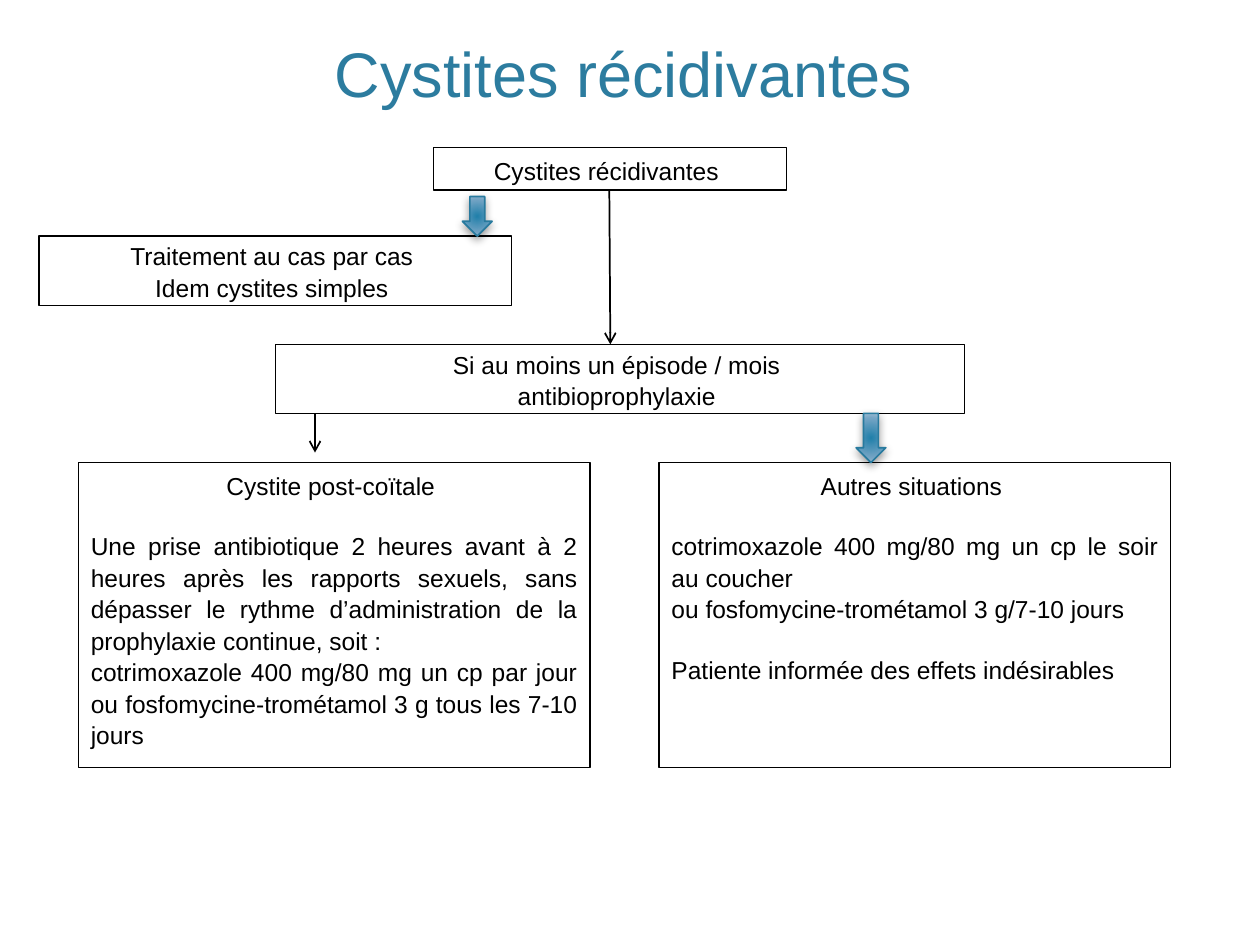
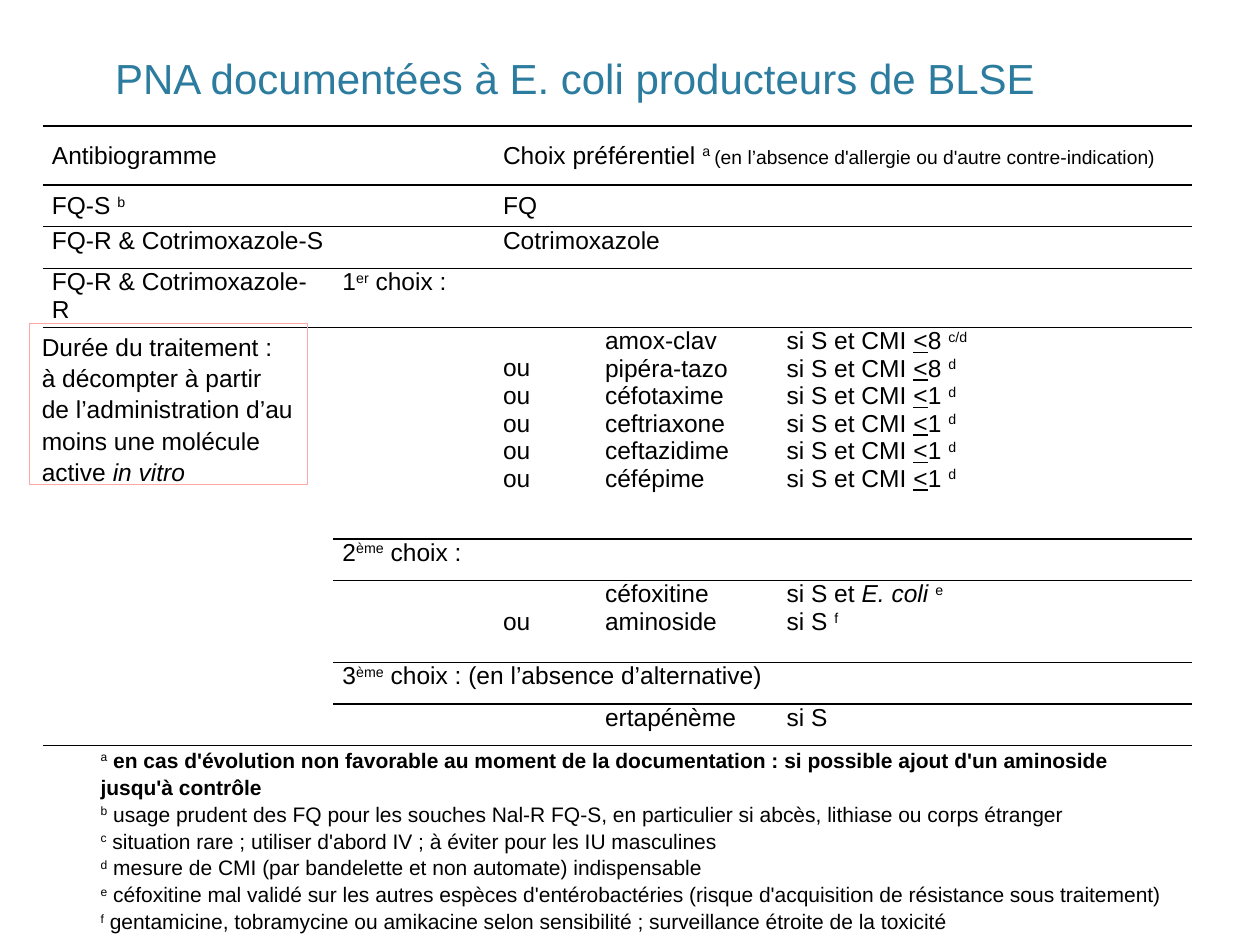
from lxml import etree
from pptx import Presentation
from pptx.dml.color import RGBColor as Rgb
from pptx.enum.shapes import MSO_CONNECTOR as Con, MSO_SHAPE as Shp
from pptx.enum.text import MSO_ANCHOR as Anc, PP_ALIGN as Al
from pptx.oxml import parse_xml
from pptx.oxml.ns import qn
from pptx.util import Pt

HEX = {"ink": "000000", "title": "2C7C9F", "edge": "287A9E", "note": "FFA7A7",
       "deep": "2180AA", "mid": "75A5C5", "pale": "B8CCDC"}
FONT = "Arial"
LEAD = 1.07     # line spacing in boxes
GAP = 16.8      # one empty line in a box
LINE = 15.7     # one line in a table cell
NS = 'xmlns:a="http://schemas.openxmlformats.org/drawingml/2006/main"'
PLAIN = "{2D5ABB26-0587-4C30-8999-92F81FD0307C}"
ALIGN = {"c": Al.CENTER, "j": Al.JUSTIFY, "l": Al.LEFT}

# A paragraph is a list of parts: plain text, or (text, mark) with the marks
# ^ superscript, _ underlined, / italic, * bold, s small.

# Flow chart: place, anchor, then (align, space before, parts)
FLOW = [
    ((247.7, 84.2, 201.6, 24.5), Anc.TOP, [("c", 0, ["Cystites récidivantes "])]),
    ((22.3, 134.9, 270, 39.6), Anc.MIDDLE, [
        ("c", 0, ["Traitement au cas par cas "]),
        ("c", 0, ["Idem cystites simples "])]),
    ((157.5, 196.8, 393.8, 39.6), Anc.MIDDLE, [
        ("c", 0, ["Si au moins un épisode / mois "]),
        ("c", 0, ["antibioprophylaxie "])]),
    ((44.8, 264.2, 292.4, 174.3), Anc.TOP, [
        ("c", 0, ["Cystite post-coïtale "]),
        ("j", GAP, ["Une prise antibiotique 2 heures avant à 2 heures après les rapports "
                    "sexuels, sans dépasser le rythme d’administration de la prophylaxie "
                    "continue, soit : "]),
        ("j", 0, ["cotrimoxazole 400 mg/80 mg un cp par jour ou "
                  "fosfomycine-trométamol 3 g tous les 7-10 jours "])]),
    ((376.6, 264.2, 292.4, 174.3), Anc.TOP, [
        ("c", 0, ["Autres situations "]),
        ("j", GAP, ["cotrimoxazole 400 mg/80 mg un cp le soir au coucher"]),
        ("j", 0, ["ou fosfomycine-trométamol 3 g/7-10 jours "]),
        ("j", GAP, ["Patiente informée des effets indésirables"])]),
]
LINKS = [(348.2, 108.8, 348.8, 196.8), (180, 236.4, 180, 258.6)]
BLOCKS = [(264.3, 112.3, 16.9, 22.6), (489.3, 236.2, 16.9, 28.1)]

# Table of choices
COLS = [166, 91.8, 58.3, 103.7, 236.9]
ROWS = [33.8, 23.8, 23.8, 33.1, 121, 23.8, 23.8, 23, 23.8, 23.8]
DRUGS = [("amox-clav", "8 ", "c/d"), ("pipéra-tazo", "8 ", "d"), ("céfotaxime", "1 ", "d"),
         ("ceftriaxone", "1 ", "d"), ("ceftazidime", "1 ", "d"), ("céfépime", "1 ", "d")]
CELLS = {
    (0, 0): [["Antibiogramme"]],
    (0, 2): [["Choix préférentiel ", ("a ", "^"),
              ("(en l’absence d'allergie ou d'autre contre-indication)", "s")]],
    (1, 0): [["FQ-S ", ("b", "^")]],
    (1, 2): [["FQ"]],
    (2, 0): [["FQ-R & Cotrimoxazole-S"]],
    (2, 2): [["Cotrimoxazole"]],
    (3, 0): [["FQ-R & Cotrimoxazole-R"]],
    (3, 1): [["1", ("er", "^"), " choix :"]],
    (4, 2): [["ou"]] * (len(DRUGS) - 1),
    (4, 3): [[name] for name, _, _ in DRUGS],
    (4, 4): [["si S et CMI ", ("<", "_"), cap, (ref, "^")] for _, cap, ref in DRUGS],
    (5, 1): [["2", ("ème", "^"), " choix :"]],
    (6, 2): [["ou"]],
    (6, 3): [["céfoxitine"], ["aminoside"]],
    (6, 4): [["si S et ", ("E. coli ", "/"), ("e", "^")], ["si S ", ("f", "^")]],
    (8, 1): [["3", ("ème", "^"), " choix : (en l’absence d’alternative)"]],
    (9, 3): [["ertapénème"]],
    (9, 4): [["si S"]],
}
SPANS = [(r, 2, r, 4) for r in (0, 1, 2, 3, 5)] + [(6, c, 7, c) for c in (2, 3, 4)]
SPANS.append((8, 1, 8, 4))
RULES = {0: 0, 1: 0, 2: 0, 3: 0, 5: 1, 8: 1}    # row: first column of its top rule
MIDDLE = (0, 1)                                 # rows centred in height
LOWER = [(4, 2), (6, 2)]                        # cells that start one line down

NOTES = [
    ("a", [(" en cas d'évolution non favorable au moment de la documentation : "
            "si possible ajout d'un aminoside jusqu'à contrôle", "*")]),
    ("b", [" usage prudent des FQ pour les souches Nal-R FQ-S, en particulier si abcès, "
           "lithiase ou corps étranger"]),
    ("c", [" situation rare ; utiliser d'abord IV ; à éviter pour les IU masculines"]),
    ("d", [" mesure de CMI (par bandelette et non automate) indispensable"]),
    ("e", [" céfoxitine mal validé sur les autres espèces d'entérobactéries "
           "(risque d'acquisition de résistance sous traitement)"]),
    ("f", [" gentamicine, tobramycine ou amikacine selon sensibilité ; "
           "surveillance étroite de la toxicité"]),
]
TERM = [
    ("l", 0, ["Durée du traitement :"]),
    ("l", 0, ["à décompter à partir de l’administration d’au moins une molécule active ",
              ("in vitro", "/")]),
]


def pts(*nums):
    return [Pt(n) for n in nums]


def write(para, parts, size=14, tint="ink"):
    for part in parts:
        text, mark = (part, "") if isinstance(part, str) else part
        run = para.add_run()
        run.text = text
        font = run.font
        font.name = FONT
        font.size = Pt(11 if mark == "s" else size)
        font.color.rgb = Rgb.from_string(HEX[tint])
        if mark == "^":
            run._r.get_or_add_rPr().set("baseline", "30000")
        elif mark == "_":
            font.underline = True
        elif mark == "/":
            font.italic = True
        elif mark == "*":
            font.bold = True


def fill(frame, paras, size=14, tint="ink", lead=LEAD):
    """Write (align, space before, parts) paragraphs into a text frame."""
    frame.word_wrap = True
    for i, (side, gap, parts) in enumerate(paras):
        para = frame.add_paragraph() if i else frame.paragraphs[0]
        para.alignment = ALIGN[side]
        para.line_spacing = lead
        if gap:
            para.space_before = Pt(gap)
        write(para, parts, size, tint)


def label(slide, place, paras, anchor, **look):
    box = slide.shapes.add_textbox(*pts(*place))
    box.text_frame.vertical_anchor = anchor
    fill(box.text_frame, paras, **look)


def head(slide, place, text, size):
    label(slide, place, [("c", 0, [text])], Anc.BOTTOM, size=size, tint="title", lead=1)


def frame(slide, place, paras, anchor=Anc.TOP, edge="ink"):
    """Draw an outlined box with text."""
    box = slide.shapes.add_shape(Shp.RECTANGLE, *pts(*place))
    box.shadow.inherit = False
    box.fill.background()
    box.line.color.rgb = Rgb.from_string(HEX[edge])
    box.line.width = Pt(0.75)
    box.text_frame.vertical_anchor = anchor
    fill(box.text_frame, paras)


def link(slide, ends):
    """Draw a thin line with an arrowhead at its end."""
    line = slide.shapes.add_connector(Con.STRAIGHT, *pts(*ends))
    line.line.color.rgb = Rgb.from_string(HEX["ink"])
    line.line.width = Pt(1)
    etree.SubElement(line.line._get_or_add_ln(), qn("a:tailEnd"), type="arrow")
    etree.SubElement(line._element.spPr, qn("a:effectLst"))


def block(slide, place):
    """Draw a shaded block arrow pointing down."""
    arrow = slide.shapes.add_shape(Shp.DOWN_ARROW, *pts(*place))
    arrow.line.color.rgb = Rgb.from_string(HEX["edge"])
    arrow.line.width = Pt(1)
    arrow.shadow.inherit = False
    stops = "".join(f'<a:gs pos="{pos}000"><a:srgbClr val="{HEX[tint]}"/></a:gs>'
                    for pos, tint in ((0, "deep"), (69, "mid"), (100, "pale")))
    props = arrow._element.spPr
    props.insert(2, parse_xml(
        f'<a:gradFill {NS}><a:gsLst>{stops}</a:gsLst><a:path path="circle">'
        '<a:fillToRect l="100000" t="100000" r="100000" b="100000"/></a:path></a:gradFill>'))
    props.find(qn("a:effectLst")).append(parse_xml(
        f'<a:outerShdw {NS} blurRad="{Pt(5)}" dist="{Pt(2)}" dir="5400000" rotWithShape="0">'
        f'<a:srgbClr val="{HEX["ink"]}"><a:alpha val="40000"/></a:srgbClr></a:outerShdw>'))


def rule(cell, side):
    cell._tc.get_or_add_tcPr().insert(0, parse_xml(
        f'<a:{side} {NS} w="{Pt(1)}"><a:solidFill><a:srgbClr val="{HEX["ink"]}"/>'
        f'</a:solidFill></a:{side}>'))


def grid(slide, x, y):
    shape = slide.shapes.add_table(len(ROWS), len(COLS), *pts(x, y, sum(COLS), sum(ROWS)))
    table = shape.table
    table.first_row = table.horz_banding = False
    table._tbl.tblPr.find(qn("a:tableStyleId")).text = PLAIN
    for col, wide in zip(table.columns, COLS):
        col.width = Pt(wide)
    for r, high in enumerate(ROWS):
        table.rows[r].height = Pt(high)
        for c in range(len(COLS)):
            cell = table.cell(r, c)
            cell.fill.background()
            cell.margin_left = cell.margin_right = Pt(5.4)
            cell.margin_top = Pt(LINE if (r, c) in LOWER else 0)
            cell.margin_bottom = 0
            cell.vertical_anchor = Anc.MIDDLE if r in MIDDLE else Anc.TOP
            if r == len(ROWS) - 1:
                rule(cell, "lnB")
            if c >= RULES.get(r, len(COLS)):
                rule(cell, "lnT")
    for top, left, low, right in SPANS:
        table.cell(top, left).merge(table.cell(low, right))
    for spot, paras in CELLS.items():
        text = table.cell(*spot).text_frame
        for i, parts in enumerate(paras):
            write(text.add_paragraph() if i else text.paragraphs[0], parts)


def main():
    deck = Presentation()
    deck.slide_width, deck.slide_height = pts(720, 540)
    blank = deck.slide_layouts[6]

    flow = deck.slides.add_slide(blank)
    for place, anchor, paras in FLOW:
        frame(flow, place, paras, anchor)
    for ends in LINKS:
        link(flow, ends)
    for place in BLOCKS:
        block(flow, place)
    head(flow, (44.6, 17.3, 633.6, 49), "Cystites récidivantes ", 36)

    drugs = deck.slides.add_slide(blank)
    notes = [("l", 0, [(ref, "^"), *parts]) for ref, parts in NOTES]
    label(drugs, (50.4, 425.5, 630, 108.7), notes, Anc.MIDDLE, size=12)
    grid(drugs, 24.3, 72)
    frame(drugs, (16.8, 184.8, 158.8, 92.3), TERM, edge="note")
    head(drugs, (15.1, 15.1, 633.6, 47.5),
         "PNA documentées à E. coli producteurs de BLSE ", 24)

    deck.save("out.pptx")


if __name__ == "__main__":
    main()
